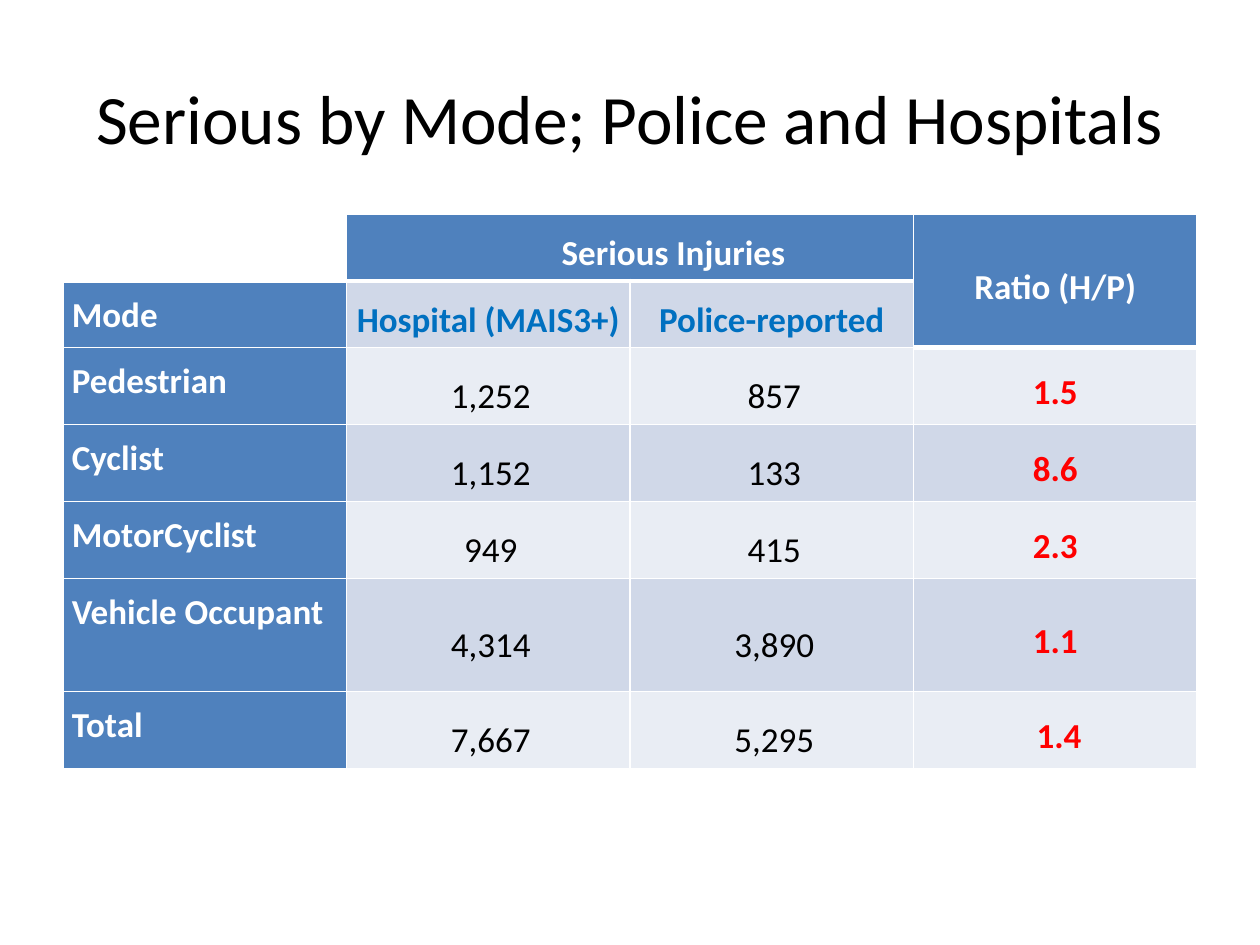
from dataclasses import dataclass

from lxml.etree import SubElement
from pptx import Presentation
from pptx.dml.color import RGBColor
from pptx.enum.text import MSO_ANCHOR, PP_ALIGN
from pptx.oxml.ns import qn
from pptx.util import Inches, Pt


@dataclass(frozen=True)
class Theme:
    font: str = "Calibri"
    title_size: float = 39.6
    table_size: float = 20
    black: str = "000000"
    white: str = "FFFFFF"
    heading: str = "4F81BD"
    subheading: str = "0070C0"
    ratio: str = "FF0000"
    bands: tuple = ("E9EDF4", "D0D8E8")
    thin: float = 1
    thick: float = 3


class Slide:
    def __init__(self, deck, theme):
        self.theme = theme
        self.width, self.height = deck.slide_width, deck.slide_height
        self.page = deck.slides.add_slide(deck.slide_layouts[5])

    def place(self, left, top, width, height):
        """Turn shares of the slide's size into lengths."""
        return (int(left * self.width), int(top * self.height),
                int(width * self.width), int(height * self.height))

    def add_span(self, para, text, size, color, bold=False):
        span = para.add_run()
        span.text = text
        font = span.font
        font.name, font.size, font.bold = self.theme.font, Pt(size), bold
        font.color.rgb = RGBColor.from_string(color)

    def title(self, text, area):
        box = self.page.shapes.title
        box.left, box.top, box.width, box.height = self.place(*area)
        box.text_frame.vertical_anchor = MSO_ANCHOR.MIDDLE
        para = box.text_frame.paragraphs[0]
        para.alignment = PP_ALIGN.CENTER
        self.add_span(para, text, self.theme.title_size, self.theme.black)

    def table(self, area, row_heights, columns):
        frame = self.page.shapes.add_table(len(row_heights), columns, *self.place(*area))
        table = frame.table
        table.first_row = table.horz_banding = False
        for row, height in zip(table.rows, row_heights):
            row.height = Inches(height)
        return table

    def borders(self, cell, top, bottom):
        """Draw white cell edges; top and bottom tell which are thick."""
        properties = cell._tc.get_or_add_tcPr()
        for edge, thick in (("L", False), ("R", False), ("T", top), ("B", bottom)):
            width = self.theme.thick if thick else self.theme.thin
            line = SubElement(properties, qn(f"a:ln{edge}"), w=str(Pt(width)))
            fill = SubElement(line, qn("a:solidFill"))
            SubElement(fill, qn("a:srgbClr"), val=self.theme.white)

    def cell(self, cell, text, fill, color, bold=True, align=PP_ALIGN.CENTER,
             anchor=MSO_ANCHOR.MIDDLE, spacing=1.3, before=0, indent=0):
        cell.fill.solid()
        cell.fill.fore_color.rgb = RGBColor.from_string(fill)
        cell.vertical_anchor = anchor
        cell.margin_left = cell.margin_right = Inches(0.07)
        cell.margin_top = cell.margin_bottom = 0
        para = cell.text_frame.paragraphs[0]
        para.alignment, para.line_spacing, para.space_before = align, spacing, Pt(before)
        if indent:
            para._p.get_or_add_pPr().set("marL", str(Inches(indent)))
        self.add_span(para, text, self.theme.table_size, color, bold)

    def row_label(self, cell, text):
        self.cell(cell, text, self.theme.heading, self.theme.white,
                  align=PP_ALIGN.JUSTIFY, anchor=MSO_ANCHOR.TOP)

    def count(self, cell, text, fill):
        self.cell(cell, text, fill, self.theme.black, bold=False,
                  spacing=1.5, before=1, indent=0.04)


INJURIES = [
    ("Pedestrian", "1,252", "857", "1.5"),
    ("Cyclist", "1,152", "133", "8.6"),
    ("MotorCyclist", "949", "415", "2.3"),
    ("Vehicle Occupant", "4,314", "3,890", "1.1"),
    ("Total", "7,667", "5,295", "1.4"),
]


def main():
    deck = Presentation()
    deck.slide_width, deck.slide_height = Inches(10), Inches(7.5)
    theme = Theme()
    slide = Slide(deck, theme)
    slide.title("Serious by Mode; Police and Hospitals", (0.05, 0.04, 0.9, 1 / 6))

    heights = [0.53, 0.53, 0.61, 0.61, 0.61, 0.9, 0.61]
    table = slide.table((0.05, 1.7 / 7.5, 0.9, sum(heights) / 7.5), heights, 4)
    for row in range(len(heights)):
        for column in range(4):
            ratio = column == 3
            slide.borders(table.cell(row, column),
                          top=row == (2 if ratio else 1),
                          bottom=row == 0 or (ratio and row == 1))

    table.cell(0, 1).merge(table.cell(0, 2))
    table.cell(0, 3).merge(table.cell(1, 3))
    table.cell(0, 0).fill.background()
    slide.cell(table.cell(0, 1), "Serious Injuries", theme.heading, theme.white, indent=0.69)
    slide.cell(table.cell(0, 3), "Ratio (H/P)", theme.heading, theme.white)
    slide.row_label(table.cell(1, 0), "Mode")
    for column, text in enumerate(("Hospital (MAIS3+)", "Police-reported"), start=1):
        slide.cell(table.cell(1, column), text, theme.bands[1], theme.subheading)

    for row, (mode, hospital, police, ratio) in enumerate(INJURIES, start=2):
        band = theme.bands[row % 2]
        slide.row_label(table.cell(row, 0), mode)
        slide.count(table.cell(row, 1), hospital, band)
        slide.count(table.cell(row, 2), police, band)
        slide.cell(table.cell(row, 3), ratio, band, theme.ratio,
                   indent=0.06 if mode == "Total" else 0)

    deck.save("out.pptx")


if __name__ == "__main__":
    main()
